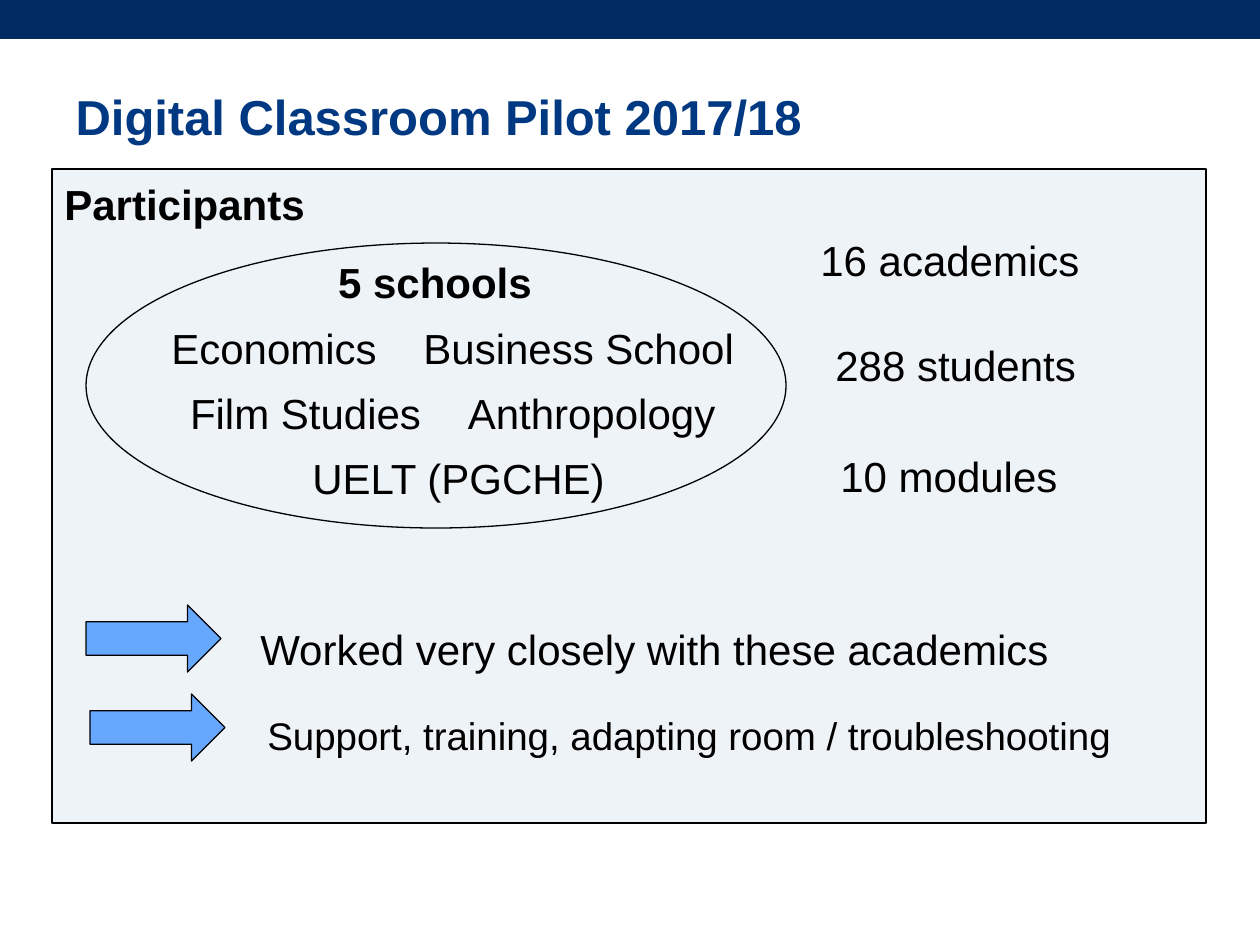
from pptx import Presentation
from pptx import util as u
from pptx.dml.color import RGBColor
from pptx.enum import shapes, text

PX_PER_INCH = 126
FONT = "Arial"
NAVY = RGBColor(0x00, 0x2A, 0x62)
TITLE_BLUE = RGBColor(0x00, 0x38, 0x82)
PALE = RGBColor(0xEE, 0xF3, 0xF8)
ARROW_BLUE = RGBColor(0x67, 0xA8, 0xFF)
BLACK = RGBColor(0, 0, 0)
LEFT, CENTER = text.PP_ALIGN.LEFT, text.PP_ALIGN.CENTER


def px(length):
    return u.Emu(round(length * 914400 / PX_PER_INCH))


def add_span(para, words, size=24, bold=False, color=BLACK):
    span = para.add_run()
    span.text = words
    span.font.name = FONT
    span.font.size = u.Pt(size)
    span.font.bold = bold
    span.font.color.rgb = color
    return span


def add_shape(page, kind, left, top, width, height, fill=None, line=BLACK):
    shape = page.shapes.add_shape(kind, px(left), px(top), px(width), px(height))
    shape.shadow.inherit = False
    if fill is None:
        shape.fill.background()
    else:
        shape.fill.solid()
        shape.fill.fore_color.rgb = fill
    if line is None:
        shape.line.fill.background()
    else:
        shape.line.color.rgb = line
        shape.line.width = u.Pt(0.75)
    return shape


def add_label(page, left, top, width, height, words="", size=24, bold=False, align=LEFT):
    box = page.shapes.add_textbox(px(left), px(top), px(width), px(height))
    box.text_frame.word_wrap = True
    para = box.text_frame.paragraphs[0]
    para.alignment = align
    if words:
        add_span(para, words, size, bold)
    return box


def add_header(page, width):
    add_shape(page, shapes.MSO_SHAPE.RECTANGLE, 0, 0, width, 39, NAVY, None)
    title = page.shapes.title
    title.left, title.top, title.width, title.height = px(63), px(76), px(1143), px(79)
    frame = title.text_frame
    frame.vertical_anchor = text.MSO_ANCHOR.MIDDLE
    para = frame.paragraphs[0]
    para.alignment = LEFT
    add_span(para, "Digital Classroom Pilot 2017/18", 28, True, TITLE_BLUE)


def add_panel(page, left, top, width, height):
    panel = add_shape(page, shapes.MSO_SHAPE.RECTANGLE, left, top, width, height, PALE)
    frame = panel.text_frame
    frame.vertical_anchor = text.MSO_ANCHOR.TOP
    frame.margin_top = px(10)
    para = frame.paragraphs[0]
    para.alignment = LEFT
    add_span(para, "Participants", bold=True)


def add_schools(page, left, top, width, height):
    add_shape(page, shapes.MSO_SHAPE.OVAL, left, top, width, height)
    add_label(page, left + 130, top + 7, 438, 63, "5 schools", bold=True, align=CENTER)

    # School names, with a widened space between the two on a line
    box = add_label(page, left + 42, top + 73, 661, 197, align=CENTER)
    rows = [("Economics", "Business School "),
            ("Film Studies", "Anthropology "),
            ("UELT (PGCHE)",)]
    for index, names in enumerate(rows):
        para = box.text_frame.paragraphs[0] if index == 0 else box.text_frame.add_paragraph()
        para.alignment = CENTER
        if index:
            para.space_before = u.Pt(8.4)
        add_span(para, names[0])
        for name in names[1:]:
            gap = add_span(para, " ")
            gap.font._element.set("spc", "2000")
            add_span(para, name)


def add_counts(page, left, top):
    counts = [("16 academics", 0, 0), ("288 students", 15, 105), ("10 modules", 20, 216)]
    for words, shift, drop in counts:
        add_label(page, left + shift, top + drop, 340, 63, words)


def add_actions(page, left, top):
    actions = [("Worked very closely with these academics", 24, 0, 162, 12),
               ("Support, training, adapting room / troubleshooting", 22, 4, 166, 12)]
    for index, (words, size, shift, indent, drop) in enumerate(actions):
        row_top = top + index * 89
        add_shape(page, shapes.MSO_SHAPE.RIGHT_ARROW, left + shift, row_top, 135, 67, ARROW_BLUE)
        add_label(page, left + indent + index * 3, row_top + drop, 893, 60, words, size)


def main():
    deck = Presentation()
    deck.slide_width, deck.slide_height = px(1260), px(945)
    page = deck.slides.add_slide(deck.slide_layouts[5])
    add_header(page, 1260)
    add_panel(page, 52, 169, 1154, 654)
    add_schools(page, 86, 243, 700, 285)
    add_counts(page, 808, 228)
    add_actions(page, 86, 605)
    deck.save("out.pptx")


if __name__ == "__main__":
    main()
